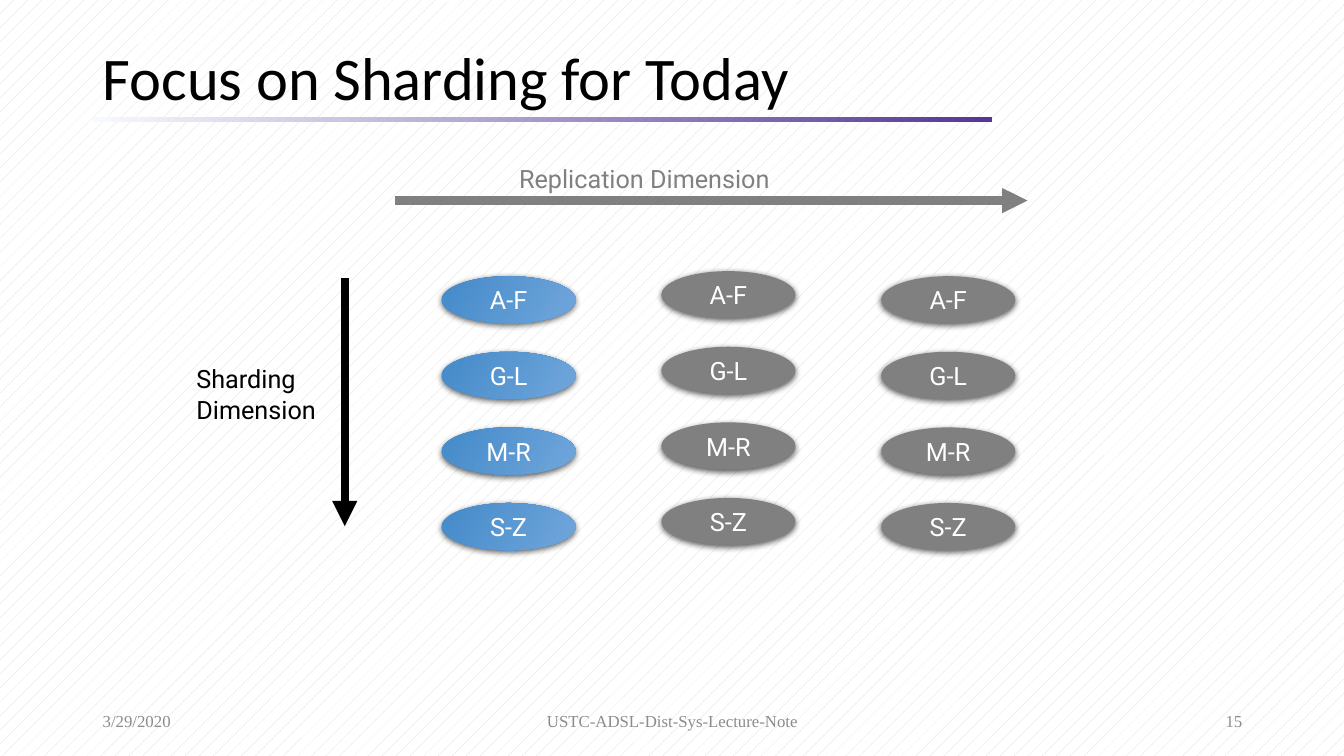
from lxml.etree import SubElement
from pptx import Presentation
from pptx.dml.color import RGBColor
from pptx.enum.dml import MSO_PATTERN
from pptx.enum.shapes import MSO_CONNECTOR, MSO_SHAPE
from pptx.enum.text import MSO_ANCHOR, MSO_AUTO_SIZE, PP_ALIGN
from pptx.oxml.ns import qn
from pptx.util import Pt

EMU_PER_PX = 9144

BLACK = RGBColor(0x00, 0x00, 0x00)
WHITE = RGBColor(0xFF, 0xFF, 0xFF)
GRAY = RGBColor(0x80, 0x80, 0x80)
FOOTER_GRAY = RGBColor(0x8C, 0x8C, 0x8C)
HATCH_GRAY = RGBColor(0xD9, 0xD9, 0xD9)
PALE = RGBColor(0xF7, 0xFA, 0xFD)
PURPLE = RGBColor(0x54, 0x37, 0x95)
DARK_BLUE = RGBColor(0x43, 0x8A, 0xC9)
LIGHT_BLUE = RGBColor(0x71, 0xA6, 0xDB)

SHARDS = ("A-F", "G-L", "M-R", "S-Z")
SHARD_WIDTH, SHARD_HEIGHT, SHARD_STEP = 133, 47, 75
REPLICA_LEFT, REPLICA_STEP = 438, 218
REPLICAS = ((274, True), (269, False), (274, False))


def px(*lengths):
    return [length * EMU_PER_PX for length in lengths]


def set_background(slide):
    fill = slide.background.fill
    fill.patterned()
    fill.pattern = MSO_PATTERN.PERCENT_5
    fill.fore_color.rgb = HATCH_GRAY
    fill.back_color.rgb = WHITE


def set_gradient(shape, start, end, angle):
    shape.fill.gradient()
    shape.fill.gradient_angle = angle
    for stop, color in zip(shape.fill.gradient_stops, (start, end)):
        stop.color.rgb = color


def set_text(shape, text, font_name, size, color, align=PP_ALIGN.LEFT):
    paragraph = shape.text_frame.paragraphs[0]
    paragraph.text = text
    paragraph.alignment = align
    paragraph.font.name = font_name
    paragraph.font.size = Pt(size)
    paragraph.font.color.rgb = color
    return paragraph


def add_shape(shapes, kind, box):
    shape = shapes.add_shape(kind, *px(*box))
    shape.shadow.inherit = False
    shape.line.fill.background()
    return shape


def add_shadow(shape):
    effects = shape.element.spPr.find(qn("a:effectLst"))
    shadow = SubElement(effects, qn("a:outerShdw"), blurRad=str(Pt(4.5)),
                        dist=str(Pt(1.5)), dir="5400000", rotWithShape="0")
    color = SubElement(shadow, qn("a:srgbClr"), val=str(BLACK))
    SubElement(color, qn("a:alpha"), val="63000")


def add_replica(slide, left, top, active):
    group = slide.shapes.add_group_shape()
    for row, shard in enumerate(SHARDS):
        box = (left, top + row * SHARD_STEP, SHARD_WIDTH, SHARD_HEIGHT)
        oval = add_shape(group.shapes, MSO_SHAPE.OVAL, box)
        if active:
            set_gradient(oval, DARK_BLUE, LIGHT_BLUE, 330)
        else:
            oval.fill.solid()
            oval.fill.fore_color.rgb = GRAY
        add_shadow(oval)
        oval.text_frame.vertical_anchor = MSO_ANCHOR.MIDDLE
        set_text(oval, shard, "Roboto", 18, WHITE, PP_ALIGN.CENTER)


def add_arrow(slide, start, end, color):
    arrow = slide.shapes.add_connector(MSO_CONNECTOR.STRAIGHT, *px(*start, *end))
    arrow.line.color.rgb = color
    arrow.line.width = Pt(6)
    SubElement(arrow.line._get_or_add_ln(), qn("a:tailEnd"), type="triangle")
    SubElement(arrow.element.spPr, qn("a:effectLst"))


def add_label(slide, box, text, color):
    label = slide.shapes.add_textbox(*px(*box))
    label.text_frame.word_wrap = False
    label.text_frame.auto_size = MSO_AUTO_SIZE.SHAPE_TO_FIT_TEXT
    set_text(label, text, "Roboto", 18, color)


def add_line_of_text(slide, box, *text_style):
    textbox = slide.shapes.add_textbox(*px(*box))
    textbox.text_frame.word_wrap = True
    textbox.text_frame.vertical_anchor = MSO_ANCHOR.MIDDLE
    return set_text(textbox, *text_style)


def add_footer(slide, left, width, text, align):
    add_line_of_text(slide, (left, 695, width, 40), text,
                     "Times New Roman", 12, FOOTER_GRAY, align)


def main():
    presentation = Presentation()
    presentation.slide_width, presentation.slide_height = px(1333, 750)
    slide = presentation.slides.add_slide(presentation.slide_layouts[6])
    set_background(slide)

    underline = add_shape(slide.shapes, MSO_SHAPE.RECTANGLE, (92, 116, 892, 5))
    set_gradient(underline, PALE, PURPLE, 0)
    title = add_line_of_text(slide, (92, 43, 1150, 75), "Focus on Sharding for Today",
                             "Calibri", 43.2, BLACK)
    title.line_spacing = 0.9

    for column, (top, active) in enumerate(REPLICAS):
        add_replica(slide, REPLICA_LEFT + column * REPLICA_STEP, top, active)

    add_arrow(slide, (392, 199), (1019, 199), GRAY)
    add_label(slide, (505, 157, 271, 40), "Replication Dimension", GRAY)
    add_arrow(slide, (342, 276), (342, 522), BLACK)
    add_label(slide, (185, 356, 144, 71), "Sharding\nDimension", BLACK)

    add_footer(slide, 92, 300, "3/29/2020", PP_ALIGN.LEFT)
    add_footer(slide, 442, 450, "USTC-ADSL-Dist-Sys-Lecture-Note", PP_ALIGN.CENTER)
    add_footer(slide, 942, 300, "15", PP_ALIGN.RIGHT)

    presentation.save("out.pptx")


if __name__ == "__main__":
    main()
